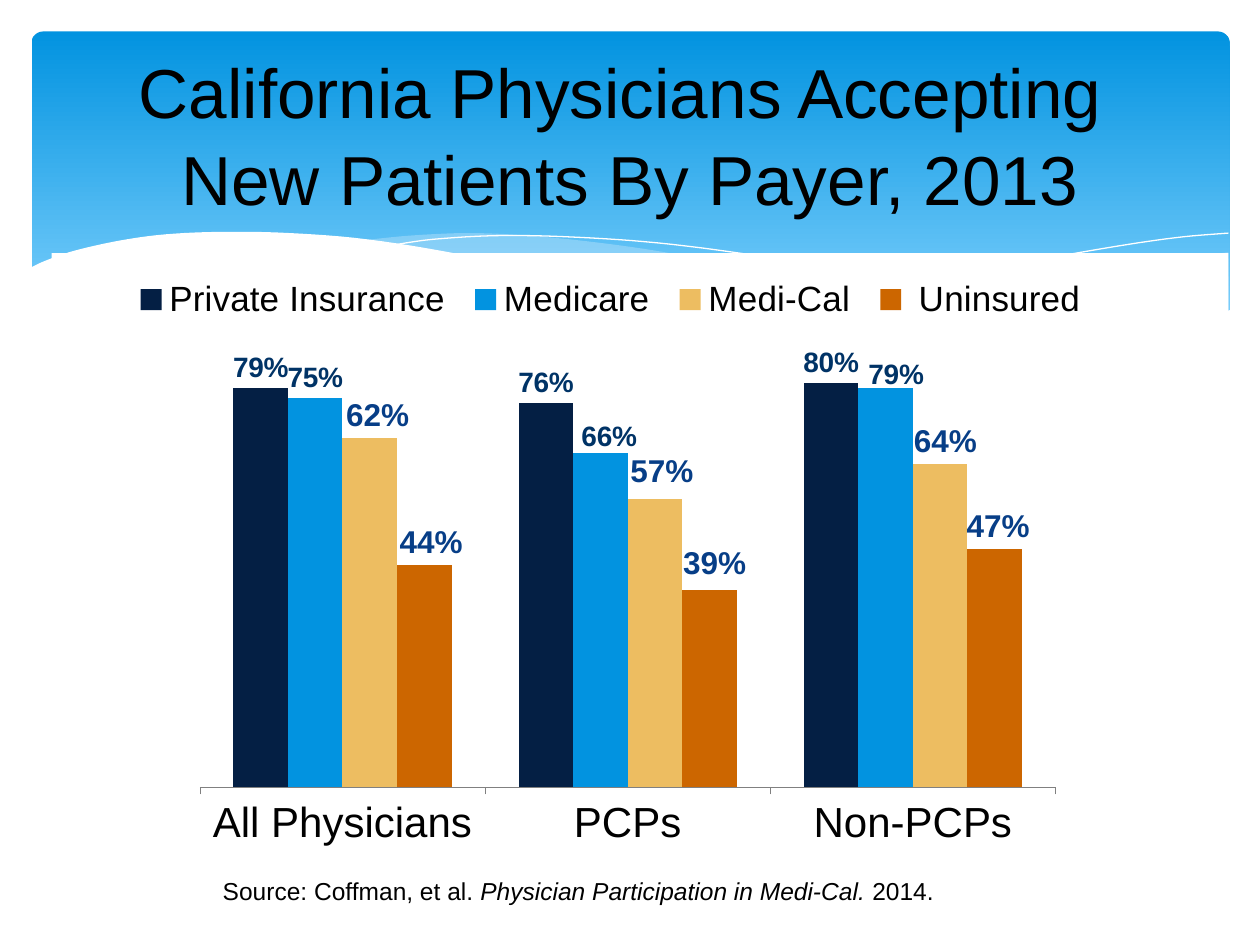
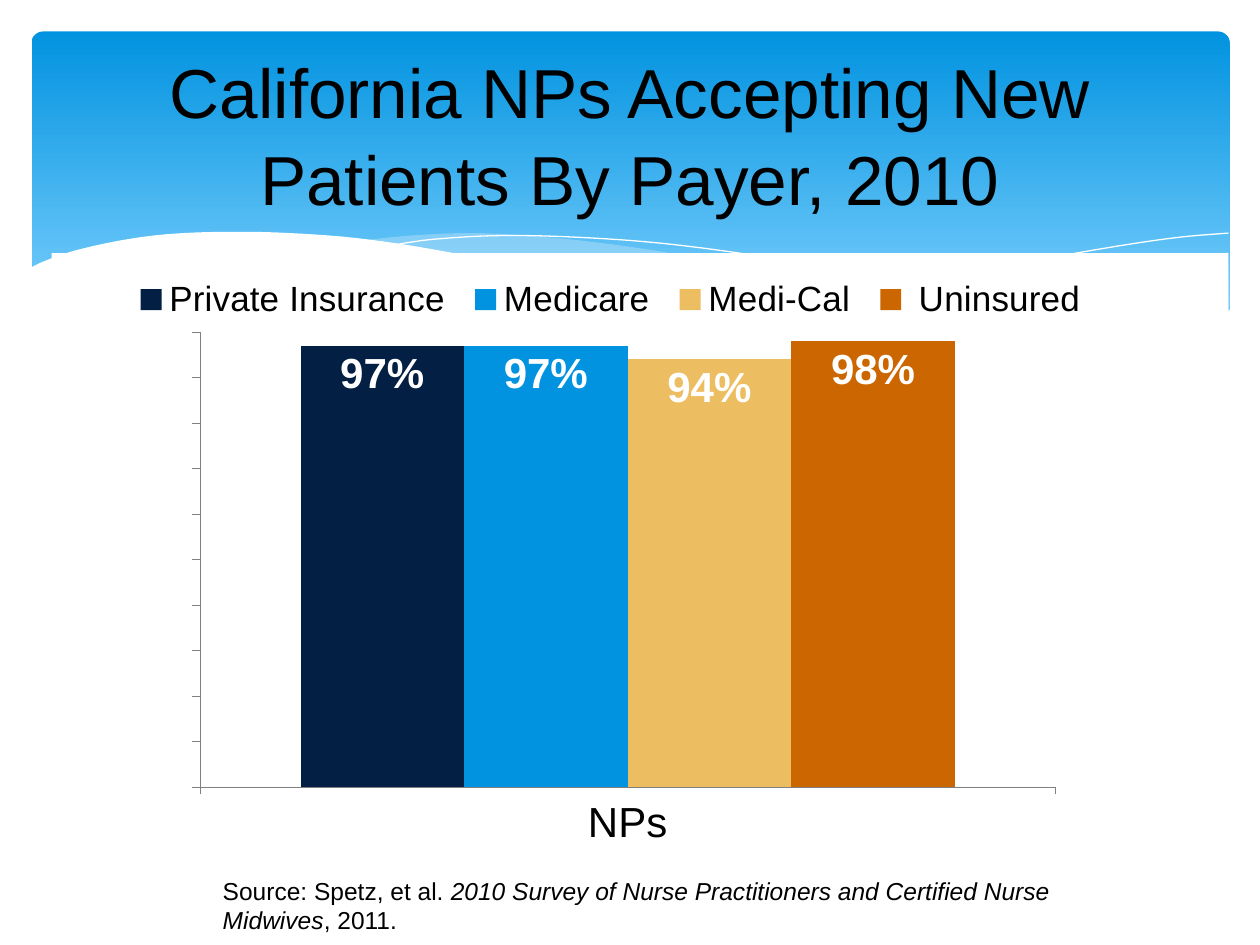
import pptx
import pptx.chart.data
import pptx.dml.color
import pptx.enum.chart
import pptx.enum.shapes
import pptx.enum.text
import pptx.oxml
import pptx.oxml.ns
import pptx.util
from pptx.util import Pt

FONT = "Arial"
BLACK, WHITE, GRAY = "000000", "FFFFFF", "808080"
BAND_TOP, BAND_BOTTOM, WAVE = "0293E0", "83D3FE", "C6E7FC"
LABEL_DARK, LABEL_BLUE = "003366", "073E87"

PAYERS = ["Private Insurance", "Medicare", "Medi-Cal", " Uninsured"]
PAYER_COLORS = ["041F44", "0293E0", "EDBD61", "CC6600"]

# Wave outlines in points; each run is smoothed on its own, so corners stay sharp
RIGHT_WAVE = [
    [(702, 144), (673, 149), (641.5, 155.5), (620, 160.5), (561, 174), (508, 185), (476, 191)],
    [(476, 191), (507.5, 195), (545, 198.5), (586, 200), (628, 197.5), (663, 191), (702.5, 178)],
]
CENTER_WAVE = [
    [(206, 137.5), (236, 134.5), (273.5, 133.2), (318, 136), (370, 142.5), (420.5, 152),
     (453, 160), (508, 173), (581, 187), (643, 196.5)],
    [(643, 196.5), (596, 200), (538.5, 198.5), (468, 190), (381.5, 173), (323, 160),
     (276, 149), (232.5, 141), (206, 137.5)],
]
CREST_LINE = [[(222.5, 140.5), (247.5, 136.8), (288.5, 134.6), (337.5, 136), (384, 139.7),
               (438, 147), (500.5, 157.7), (572.5, 173.5), (653, 196)]]
RISING_LINE = [[(441.5, 185), (500.5, 169), (558.5, 155.5), (602, 147), (644.5, 139.7),
                (675.5, 135.4), (702, 133.2)]]
FRONT_WAVE = [
    [(703.4, 177), (669.5, 188.5), (630, 196.5), (582.5, 199.5), (522.5, 196), (450.5, 186),
     (381, 172), (322, 158.5), (263, 145.4), (210, 136.8), (165.6, 133.2), (127.5, 132.5),
     (95, 133.9), (68.4, 137.5), (42.5, 143.3), (26, 149), (16.6, 153.4)],
    [(16.6, 237), (703.4, 237)],
]

CHART_BOX = (29.5, 144.7, 672.5, 379.4)
PLOT_AREA = (0.126, 0.119, 0.727, 0.685)
LEGEND_AREA = (0.06, 0.02, 0.83, 0.1)


def color(hex_string):
    return pptx.dml.color.RGBColor.from_string(hex_string)


def smooth(points, steps=6):
    """Return a Catmull-Rom curve through the points."""
    padded = [points[0], *points, points[-1]]
    curve = [points[0]]
    for a, b, c, d in zip(padded, padded[1:], padded[2:], padded[3:]):
        for step in range(1, steps + 1):
            t = step / steps
            curve.append(tuple(
                0.5 * (2 * q + (r - p) * t + (2 * p - 5 * q + 4 * r - s) * t ** 2
                       + (3 * q - p - 3 * r + s) * t ** 3)
                for p, q, r, s in zip(a, b, c, d)))
    return curve


def layout_xml(x, y, width=None, height=None, inner=False):
    """Return a manual chart layout; without a size it is an offset."""
    parts = '<c:layoutTarget val="inner"/>' if inner else ""
    if width is not None:
        parts += '<c:xMode val="edge"/><c:yMode val="edge"/>'
    parts += f'<c:x val="{x:.4f}"/><c:y val="{y:.4f}"/>'
    if width is not None:
        parts += f'<c:w val="{width}"/><c:h val="{height}"/>'
    return pptx.oxml.parse_xml(
        f'<c:layout {pptx.oxml.ns.nsdecls("c")}><c:manualLayout>{parts}</c:manualLayout></c:layout>')


def white_fill_xml():
    return pptx.oxml.parse_xml(
        f'<c:spPr {pptx.oxml.ns.nsdecls("c", "a")}><a:solidFill><a:srgbClr val="{WHITE}"/>'
        '</a:solidFill><a:ln><a:noFill/></a:ln></c:spPr>')


def remove_layout(element):
    for layout in element.findall(pptx.oxml.ns.qn("c:layout")):
        element.remove(layout)


class Deck:
    def __init__(self):
        self.presentation = pptx.Presentation()
        self.presentation.slide_width = Pt(720)
        self.presentation.slide_height = Pt(540)
        self.slide = None

    def add_slide(self, title):
        self.slide = self.presentation.slides.add_slide(self.presentation.slide_layouts[6])
        self.band()
        self.wave(RIGHT_WAVE, WAVE, 29)
        self.wave(CENTER_WAVE, WAVE, 40)
        self.wave(CREST_LINE)
        self.wave(RISING_LINE)
        self.wave(FRONT_WAVE, WHITE)
        self.title(title)

    def style_font(self, font, size, hex_string=BLACK, bold=False, italic=False):
        font.name, font.size = FONT, Pt(size)
        font.bold, font.italic = bold, italic
        font.color.rgb = color(hex_string)

    def band(self):
        shape = self.slide.shapes.add_shape(
            pptx.enum.shapes.MSO_SHAPE.ROUNDED_RECTANGLE, Pt(18), Pt(18), Pt(684.7), Pt(194.4))
        shape.adjustments[0] = 0.034
        shape.shadow.inherit = False
        shape.line.fill.background()
        shape.fill.gradient()
        shape.fill.gradient_angle = 270
        for stop, position, shade in zip(
                shape.fill.gradient_stops, (0, 0.9), (BAND_TOP, BAND_BOTTOM)):
            stop.position = position
            stop.color.rgb = color(shade)

    def wave(self, runs, fill=None, opacity=100):
        """Draw a filled wave, or a white hairline when there is no fill."""
        points = [(Pt(x), Pt(y)) for run in runs
                  for x, y in (smooth(run) if len(run) > 2 else run)]
        builder = self.slide.shapes.build_freeform(*points[0], scale=1.0)
        builder.add_line_segments(points[1:], close=fill is not None)
        shape = builder.convert_to_shape()
        shape.shadow.inherit = False
        if fill is None:
            shape.fill.background()
            shape.line.color.rgb = color(WHITE)
            shape.line.width = Pt(0)
            return
        shape.line.fill.background()
        shape.fill.solid()
        shape.fill.fore_color.rgb = color(fill)
        if opacity < 100:
            rgb = shape.fill._xPr.find(".//" + pptx.oxml.ns.qn("a:srgbClr"))
            rgb.append(pptx.oxml.parse_xml(
                f'<a:alpha {pptx.oxml.ns.nsdecls("a")} val="{opacity * 1000}"/>'))

    def text_box(self, left, top, width, height):
        shape = self.slide.shapes.add_textbox(Pt(left), Pt(top), Pt(width), Pt(height))
        shape.text_frame.word_wrap = True
        return shape.text_frame

    def title(self, text):
        text_frame = self.text_box(36, 26.6, 648, 98.6)
        text_frame.vertical_anchor = pptx.enum.text.MSO_ANCHOR.MIDDLE
        text_frame.text = text
        paragraph = text_frame.paragraphs[0]
        paragraph.alignment = pptx.enum.text.PP_ALIGN.CENTER
        paragraph.line_spacing = 1.04
        for run in paragraph.runs:
            self.style_font(run.font, 39.6)

    def source(self, before, publication, after):
        paragraph = self.text_box(120.2, 496.8, 540.7, 24.5).paragraphs[0]
        for text in (before, publication, after):
            run = paragraph.add_run()
            run.text = text
            self.style_font(run.font, 14, italic=text == publication)

    def column_chart(self, categories, values, maximum):
        data = pptx.chart.data.CategoryChartData(number_format="0%")
        data.categories = categories
        for payer, payer_values in zip(PAYERS, values):
            data.add_series(payer, payer_values)
        chart = self.slide.shapes.add_chart(
            pptx.enum.chart.XL_CHART_TYPE.COLUMN_CLUSTERED,
            *(Pt(length) for length in CHART_BOX), data).chart
        self.style_font(chart.font, 18)
        chart.has_title = False

        # Columns
        plot = chart.plots[0]
        plot.gap_width, plot.overlap = 123, 0
        plot.vary_by_categories = False
        for series, shade in zip(plot.series, PAYER_COLORS):
            series.format.fill.solid()
            series.format.fill.fore_color.rgb = color(shade)

        # Axes
        for axis in (chart.category_axis, chart.value_axis):
            axis.has_major_gridlines = False
            axis.major_tick_mark = pptx.enum.chart.XL_TICK_MARK.OUTSIDE
            axis.minor_tick_mark = pptx.enum.chart.XL_TICK_MARK.NONE
            axis.format.line.color.rgb = color(GRAY)
            axis.format.line.width = Pt(0.25)
        self.style_font(chart.category_axis.tick_labels.font, 24)
        chart.value_axis.minimum_scale = 0
        chart.value_axis.maximum_scale = maximum
        chart.value_axis.major_unit = 0.1
        chart.value_axis.tick_label_position = pptx.enum.chart.XL_TICK_LABEL_POSITION.NONE

        # Legend
        chart.has_legend = True
        chart.legend.position = pptx.enum.chart.XL_LEGEND_POSITION.TOP
        chart.legend.include_in_layout = False
        self.style_font(chart.legend.font, 20)
        legend = chart.legend._element
        remove_layout(legend)
        legend.find(pptx.oxml.ns.qn("c:legendPos")).addnext(layout_xml(*LEGEND_AREA))

        # Plot area and background
        chart_element = chart._chartSpace.find(pptx.oxml.ns.qn("c:chart"))
        plot_area = chart_element.find(pptx.oxml.ns.qn("c:plotArea"))
        remove_layout(plot_area)
        plot_area.insert(0, layout_xml(*PLOT_AREA, inner=True))
        plot_area.append(white_fill_xml())
        chart_element.addnext(white_fill_xml())
        return chart

    def series_labels(self, series, size, shade, position):
        labels = series.data_labels
        labels.show_value = True
        labels.number_format, labels.number_format_is_linked = "0%", False
        labels.position = position
        self.style_font(labels.font, size, shade, bold=True)

    def point_label(self, point, text, size, shade, shift):
        """Write a label above a column, shifted by (x, y) points."""
        label = point.data_label
        label.text_frame.text = text
        self.style_font(label.text_frame.paragraphs[0].runs[0].font, size, shade, bold=True)
        label.position = pptx.enum.chart.XL_LABEL_POSITION.OUTSIDE_END
        if any(shift):
            index = label._dLbl.find(pptx.oxml.ns.qn("c:idx"))
            index.addnext(layout_xml(shift[0] / CHART_BOX[2], shift[1] / CHART_BOX[3]))


def physicians_slide(deck):
    deck.add_slide("California Physicians Accepting \vNew Patients By Payer, 2013")
    values = [(0.79, 0.76, 0.8), (0.77, 0.66, 0.79), (0.69, 0.57, 0.64), (0.44, 0.39, 0.47)]
    label_texts = [("79%", "76%", "80%"), ("75%", "66%", "79%"),
                   ("62%", "57%", "64%"), ("44%", "39%", "47%")]
    label_shifts = [((0, 0), (0, 0), (0, 0)), ((0, 0), (5, 2), (6, 4)),
                    ((4.5, 0), (4, -3), (3, 0)), ((4, 0), (3, -2), (2, 0))]
    label_styles = [(16, LABEL_DARK)] * 2 + [(18, LABEL_BLUE)] * 2
    chart = deck.column_chart(["All Physicians", "PCPs", "Non-PCPs"], values, 0.9)
    chart.value_axis.visible = False
    for series, texts, shifts, style in zip(
            chart.plots[0].series, label_texts, label_shifts, label_styles):
        deck.series_labels(series, *style, pptx.enum.chart.XL_LABEL_POSITION.OUTSIDE_END)
        for number, (text, shift) in enumerate(zip(texts, shifts)):
            deck.point_label(series.points[number], text, *style, shift)
    deck.source("Source: Coffman, et al.", " Physician Participation in Medi-Cal.", " 2014.")


def nurse_practitioners_slide(deck):
    deck.add_slide("California NPs Accepting New Patients By Payer, 2010")
    chart = deck.column_chart(["NPs"], [(0.97,), (0.97,), (0.94,), (0.98,)], 1)
    for series in chart.plots[0].series:
        deck.series_labels(series, 24, WHITE, pptx.enum.chart.XL_LABEL_POSITION.INSIDE_END)
    deck.source("Source: Spetz, et al.",
                " 2010 Survey of Nurse Practitioners and Certified Nurse Midwives", ", 2011.")


def main():
    deck = Deck()
    physicians_slide(deck)
    nurse_practitioners_slide(deck)
    deck.presentation.save("out.pptx")


if __name__ == "__main__":
    main()
